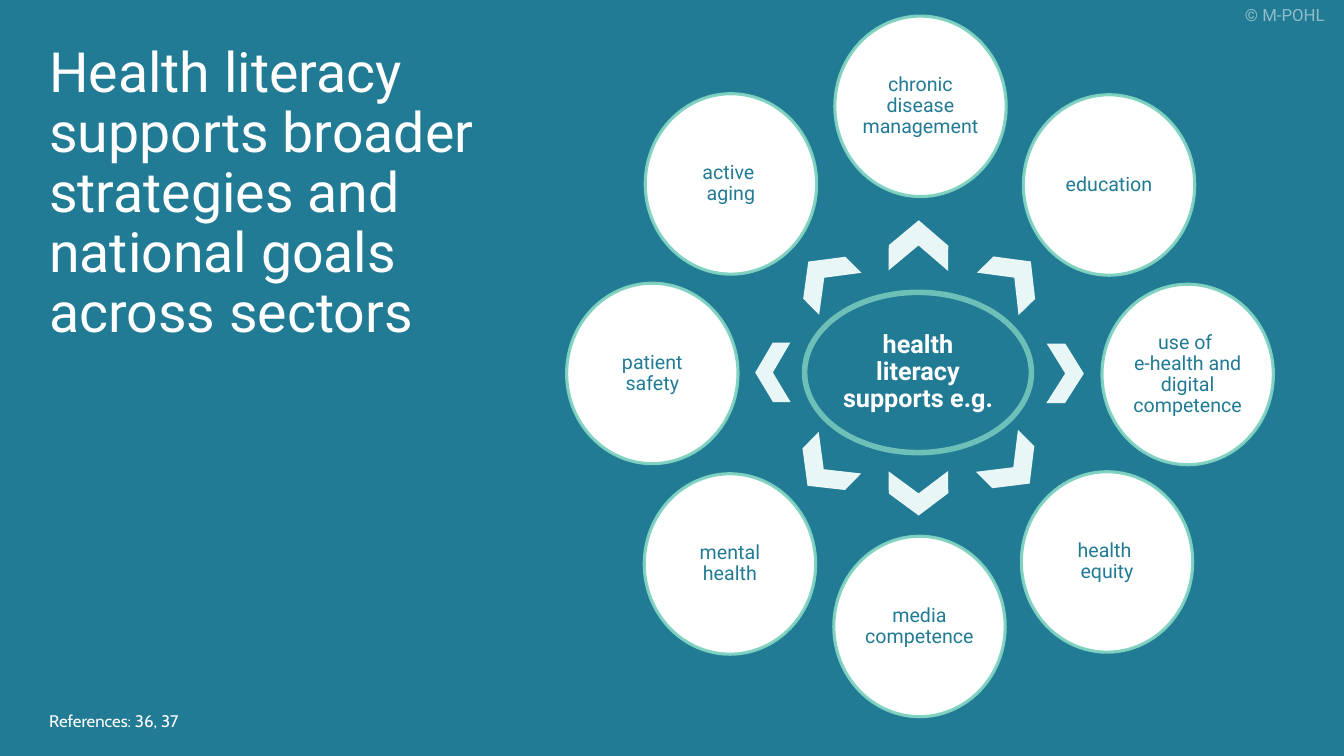
from pptx import Presentation
from pptx.dml.color import RGBColor
from pptx.enum.shapes import MSO_SHAPE
from pptx.enum.text import MSO_ANCHOR, PP_ALIGN
from pptx.oxml.ns import qn
from pptx.util import Inches, Pt
from lxml import etree

OVAL, CHEVRON = MSO_SHAPE.OVAL, MSO_SHAPE.CHEVRON
TOP, MIDDLE = MSO_ANCHOR.TOP, MSO_ANCHOR.MIDDLE
LEFT, CENTER = PP_ALIGN.LEFT, PP_ALIGN.CENTER

TEAL, MINT, PALE, WHITE = "227B94", "7FD2C1", "E8F6F5", "FFFFFF"
CIRCLE_W, CIRCLE_H = 1.7, 1.79
CHEVRON_H = 0.59


def paint(fill, color, alpha=None):
    """Make a fill solid; alpha is its opacity in percent."""
    fill.solid()
    fill.fore_color.rgb = RGBColor.from_string(color)
    if alpha is not None:
        clr = fill._xPr.find(qn("a:solidFill"))[0]
        etree.SubElement(clr, qn("a:alpha"), val=str(alpha * 1000))


def write(sp, text, size, color=WHITE, font="Roboto", bold=False, alpha=None,
          align=LEFT, anchor=MIDDLE, spacing=None, inset=None):
    tf = sp.text_frame
    tf.word_wrap = True
    tf.vertical_anchor = anchor
    if inset is not None:
        tf.margin_left = tf.margin_right = Inches(inset)
        tf.margin_top = tf.margin_bottom = Inches(inset)
    p = tf.paragraphs[0]
    p.text = text
    p.alignment = align
    p.line_spacing = spacing
    for r in p.runs:
        r.font.name = font
        r.font.size = Pt(size)
        r.font.bold = bold
        paint(r.font.fill, color, alpha)


prs = Presentation()
prs.slide_width, prs.slide_height = Inches(13.33), Inches(7.5)
s = prs.slides.add_slide(prs.slide_layouts[6])
paint(s.background.fill, TEAL)

# Title, copyright and references
labels = [
    ((0.39, 0.5, 4.86, 2.86),
     "Health literacy supports broader strategies and national goals across sectors",
     dict(size=39.6, spacing=0.9)),
    ((12.25, 0, 1.26, 0.54), "© M-POHL", dict(size=12, alpha=50, anchor=TOP)),
    ((0.39, 6.95, 4.5, 0.4), "References: 36, 37", dict(size=12, font="Cabin")),
]
for box, text, style in labels:
    write(s.shapes.add_textbox(*map(Inches, box)), text, **style)

# Ellipses: the hub, then the sectors clockwise from the top
sector_style = dict(size=14, color=TEAL, inset=0.02)
sectors = [
    (8.28, 0.16, "chronic disease management"),
    (10.15, 0.94, "education"),
    (10.93, 2.82, "use of \ne-health and digital competence"),
    (10.13, 4.68, "health \nequity"),
    (8.27, 5.32, "media competence"),
    (6.39, 4.7, "mental health"),
    (5.62, 2.81, "patient safety"),
    (6.4, 0.93, "active \naging"),
]
ellipses = [((7.98, 2.9, 2.25, 1.59), "health literacy supports e.g.", TEAL, 4, 80,
             dict(size=18, bold=True, inset=0.03))]
ellipses += [((x, y, CIRCLE_W, CIRCLE_H), text, WHITE, 2.25, 96, sector_style)
             for x, y, text in sectors]
for box, text, fill, line_width, line_alpha, style in ellipses:
    sp = s.shapes.add_shape(OVAL, *map(Inches, box))
    sp.shadow.inherit = False
    paint(sp.fill, fill)
    sp.line.width = Pt(line_width)
    paint(sp.line.fill, MINT, line_alpha)
    write(sp, text, align=CENTER, spacing=0.9, **style)

# Chevrons pointing outwards: left, top, width, rotation
chevrons = [
    (8.86, 2.14, 0.5, 270.5),
    (9.83, 2.46, 0.46, 315.6),
    (10.38, 3.41, 0.37, 0.4),
    (9.82, 4.34, 0.46, 45),
    (8.89, 4.6, 0.44, 89.6),
    (7.94, 4.36, 0.46, 134.4),
    (7.49, 3.4, 0.35, 179.7),
    (7.95, 2.46, 0.45, 225.2),
]
for x, y, width, rotation in chevrons:
    sp = s.shapes.add_shape(CHEVRON, Inches(x), Inches(y), Inches(width), Inches(CHEVRON_H))
    sp.shadow.inherit = False
    sp.rotation = rotation
    paint(sp.fill, PALE)
    sp.line.fill.background()

prs.save("out.pptx")
